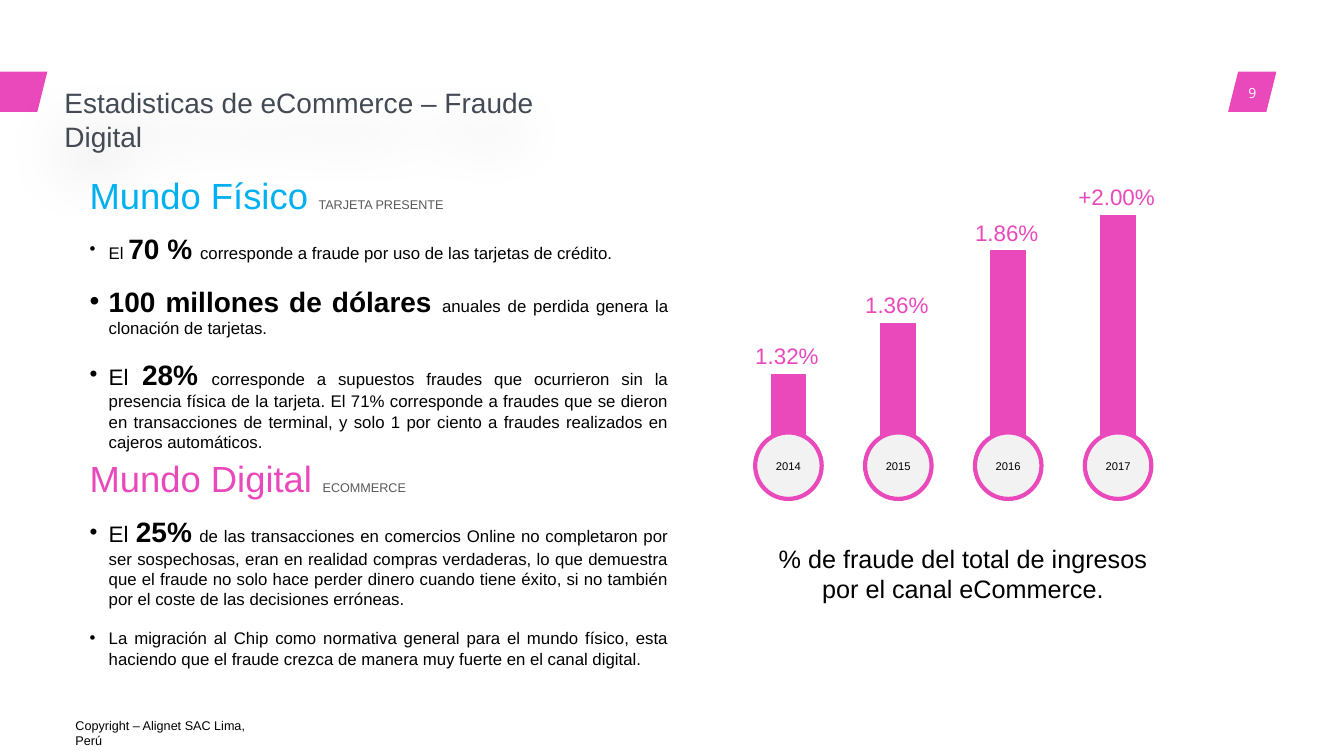
import pptx
import pptx.dml.color
import pptx.enum.shapes
import pptx.enum.text
import pptx.util
from lxml import etree

PX = 9144
PINK, BLACK, GREY = "E949BB", "000000", "595959"
SHAPE = pptx.enum.shapes.MSO_SHAPE
ALIGN = pptx.enum.text.PP_ALIGN
MIDDLE = pptx.enum.text.MSO_ANCHOR.MIDDLE
DRAWING = "http://schemas.openxmlformats.org/drawingml/2006/main"

PHYSICAL = [
    [("El ", 12, False), ("70 % ", 20, True),
     ("corresponde a fraude por uso de las tarjetas de crédito.", 12, False)],
    [("100 millones de dólares ", 20, True),
     ("anuales de perdida genera la clonación de tarjetas.", 12, False)],
    [("El ", 16, False), ("28%", 20, True), (" ", 16, False),
     ("corresponde a supuestos fraudes que ocurrieron sin la presencia física de la "
      "tarjeta. El 71% corresponde a fraudes que se dieron en transacciones de terminal, "
      "y solo 1 por ciento a fraudes realizados en cajeros automáticos.", 12, False)],
]
DIGITAL = [
    [("El ", 16, False), ("25%", 20, True), (" ", 16, False),
     ("de las transacciones en comercios Online no completaron por ser sospechosas, eran "
      "en realidad compras verdaderas, lo que demuestra que el fraude no solo hace perder "
      "dinero cuando tiene éxito, si no también por el coste de las decisiones erróneas.",
      12, False)],
    [("La migración al Chip como normativa general para el mundo físico, esta haciendo que "
      "el fraude crezca de manera muy fuerte en el canal digital.", 12, False)],
]
YEARS = [("2014", "1.32%", 71), ("2015", "1.36%", 122),
         ("2016", "1.86%", 194), ("2017", "+2.00%", 229)]


def px(*lengths):
    """Turn pixel lengths into EMU."""
    return [length * PX for length in lengths]


def color(code):
    """Turn a hex string into a colour."""
    return pptx.dml.color.RGBColor.from_string(code)


def set_font(font, size, code, name="Arial"):
    """Set the size, colour and typeface of a font."""
    font.size = pptx.util.Pt(size)
    font.color.rgb = color(code)
    font.name = name


def add_shape(page, kind, bounds, fill, line=None, width=1):
    """Add a flat preset shape."""
    shape = page.shapes.add_shape(kind, *px(*bounds))
    shape.shadow.inherit = False
    shape.fill.solid()
    shape.fill.fore_color.rgb = color(fill)
    if line:
        shape.line.color.rgb = color(line)
        shape.line.width = pptx.util.Pt(width)
    else:
        shape.line.fill.background()
    return shape


def clear_insets(frame):
    """Centre a text frame vertically with no margins."""
    frame.vertical_anchor = MIDDLE
    frame.margin_left = frame.margin_right = frame.margin_top = frame.margin_bottom = 0


def write(shape, text, size, code, align=ALIGN.LEFT, name="Arial"):
    """Write one uniform paragraph into a shape."""
    shape.text_frame.word_wrap = True
    para = shape.text_frame.paragraphs[0]
    para.text = text
    para.alignment = align
    set_font(para.font, size, code, name)


def add_label(page, bounds, *style):
    """Add a text box with one uniform paragraph."""
    box = page.shapes.add_textbox(*px(*bounds))
    write(box, *style)
    return box


def add_frame(page):
    """Add the copyright line, the edge tabs and the page number."""
    add_label(page, (65, 707, 208, 25), "Copyright – Alignet SAC Lima, Perú", 9, BLACK)
    add_shape(page, SHAPE.PARALLELOGRAM, (-58, 71, 105, 40), PINK)
    add_shape(page, SHAPE.PARALLELOGRAM, (1218, 71, 48, 40), PINK)
    number = add_label(page, (1202, 72, 80, 40), "9", 10, "FFFFFF", ALIGN.CENTER, "Open Sans")
    clear_insets(number.text_frame)


def add_title(page, bounds):
    """Add the title with its wide soft shadow."""
    title = add_label(page, bounds, "Estadisticas de eCommerce – Fraude Digital", 20, "434A54")
    effects = etree.SubElement(title._element.spPr, f"{{{DRAWING}}}effectLst")
    shadow = etree.SubElement(effects, f"{{{DRAWING}}}outerShdw", blurRad=str(50 * PX),
                              dist=str(30 * PX), dir="6600000", rotWithShape="0")
    tint = etree.SubElement(shadow, f"{{{DRAWING}}}srgbClr", val=BLACK)
    etree.SubElement(tint, f"{{{DRAWING}}}alpha", val="20000")


def add_section(page, bounds, heading, note, code, points):
    """Add a heading with a small note and its justified bullet points."""
    box = page.shapes.add_textbox(*px(*bounds))
    frame = box.text_frame
    frame.word_wrap = True
    para = frame.paragraphs[0]
    for text, size, tint in ((heading + " ", 26, code), (note, 9, GREY)):
        span = para.add_run()
        span.text = text
        set_font(span.font, size, tint)
    for index, point in enumerate(points):
        para = frame.add_paragraph()
        para.alignment = ALIGN.JUSTIFY
        para.space_before = pptx.util.Pt(13.8 if index else 10.35)
        layout = para._p.get_or_add_pPr()
        layout.set("marL", str(19 * PX))
        layout.set("indent", str(-19 * PX))
        etree.SubElement(layout, f"{{{DRAWING}}}buFont", typeface="Arial")
        etree.SubElement(layout, f"{{{DRAWING}}}buChar", char="•")
        para.font.name = "Arial"
        para.font.color.rgb = color(BLACK)
        for text, size, bold in point:
            span = para.add_run()
            span.text = text
            span.font.size = pptx.util.Pt(size)
            span.font.bold = bold


def add_year_bars(page, left, base, pitch):
    """Add a labelled bar on a year circle for each year, then the caption."""
    disc, bar, label = 66, 34, 103
    for index, (year, share, height) in enumerate(YEARS):
        middle = left + disc // 2 + index * pitch
        top = base - height
        add_shape(page, SHAPE.RECTANGLE, (middle - bar // 2, top, bar, height), PINK, PINK)
        circle = add_shape(page, SHAPE.OVAL, (middle - disc // 2, base - 14, disc, disc),
                           "F2F2F2", PINK, 3)
        clear_insets(circle.text_frame)
        write(circle, year, 8, BLACK, ALIGN.CENTER)
        add_label(page, (middle - label // 2 - 2, top - 37, label, 37),
                  share, 16, PINK, ALIGN.CENTER)
    add_label(page, (left, base + 91, 412, 71),
              "% de fraude del total de ingresos por el canal eCommerce.",
              18, BLACK, ALIGN.CENTER)


def main():
    """Build the deck and save it."""
    deck = pptx.Presentation()
    deck.slide_width, deck.slide_height = px(1333, 750)
    page = deck.slides.add_slide(deck.slide_layouts[6])
    add_frame(page)
    add_title(page, (54, 80, 557, 44))
    add_section(page, (79, 167, 594, 328), "Mundo Físico", "TARJETA PRESENTE",
                "00B0F0", PHYSICAL)
    add_section(page, (79, 448, 594, 224), "Mundo Digital", "ECOMMERCE", PINK, DIGITAL)
    add_year_bars(page, 749, 443, 109)
    deck.save("out.pptx")


if __name__ == "__main__":
    main()
